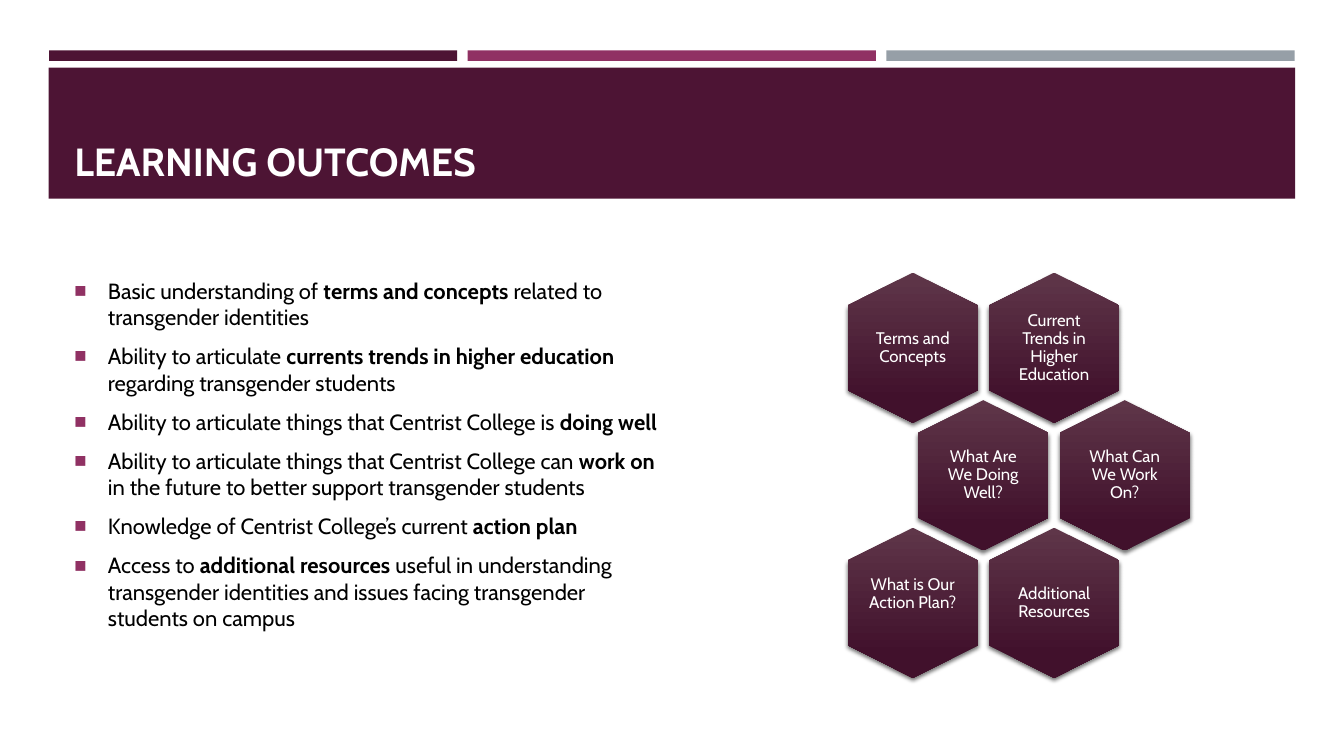
from lxml.etree import SubElement as Sub
from pptx import Presentation
from pptx.dml.color import RGBColor as RGB
from pptx.enum.shapes import MSO_SHAPE as Kind
from pptx.enum.text import MSO_ANCHOR as Anchor, PP_ALIGN as Align
from pptx.oxml.ns import qn
from pptx.util import Pt

TITLE = "LEARNING OUTCOMES"
GOALS = [
    [("Basic understanding of ", False), ("terms and concepts ", True),
     ("related to transgender identities", False)],
    [("Ability to articulate ", False), ("currents trends in higher education ", True),
     ("regarding transgender students", False)],
    [("Ability to articulate things that Centrist College is ", False), ("doing well", True)],
    [("Ability to articulate things that Centrist College can ", False), ("work on", True),
     (" in the future to better support transgender students", False)],
    [("Knowledge of Centrist College’s current ", False), ("action plan", True)],
    [("Access to ", False), ("additional resources ", True),
     ("useful in understanding transgender identities and issues facing "
      "transgender students on campus", False)],
]
CELLS = [
    [("Terms and Concepts", 0), ("Current Trends in Higher Education", 0)],
    [("What Are We Doing Well?", 0), ("What Can We Work On?", 0)],
    [("What is Our Action Plan?", -6.5), ("Additional Resources", 0)],
]
THEME = {
    "font": "Cabin", "plum": "4D1434", "rose": "903163", "gray": "969FA7",
    "light": "5F3649", "dark": "41112C", "white": "FFFFFF", "black": "000000",
    "title": 28, "body": 15.7, "cell": 12,
}


def tint(name):
    return RGB.from_string(THEME[name])


def style(para, size, color, bold=None):
    font = para.font
    font.name, font.size, font.bold = THEME["font"], Pt(THEME[size]), bold
    font.color.rgb = tint(color)


def shape(kind, left, top, width, height):
    item = slide.shapes.add_shape(kind, Pt(left), Pt(top), Pt(width), Pt(height))
    item.shadow.inherit = False
    item.line.fill.background()
    return item


def bar(left, top, width, height, color):
    item = shape(Kind.RECTANGLE, left, top, width, height)
    item.fill.solid()
    item.fill.fore_color.rgb = tint(color)


def text(left, top, width, height, anchor):
    box = slide.shapes.add_textbox(Pt(left), Pt(top), Pt(width), Pt(height))
    frame = box.text_frame
    frame.word_wrap, frame.vertical_anchor = True, anchor
    return frame


def bullet(para):
    props = para._p.get_or_add_pPr()
    props.set("marL", str(Pt(24)))
    props.set("indent", str(Pt(-24)))
    Sub(Sub(props, qn("a:buClr")), qn("a:srgbClr"), val=THEME["rose"])
    Sub(props, qn("a:buSzPct"), val="92000")
    Sub(props, qn("a:buFont"), typeface="Arial")
    Sub(props, qn("a:buChar"), char="■")


def hexagon(mid, row):
    item = shape(Kind.HEXAGON, mid - HEX_W / 2, row - HEX_H / 2, HEX_W, HEX_H)
    item.rotation = 90
    item.adjustments[0], item.adjustments[1] = 0.25, 1.15
    item.fill.gradient()
    item.fill.gradient_angle = 270
    for stop, name, place in zip(item.fill.gradient_stops, ("light", "dark"), (0, 0.84)):
        stop.color.rgb, stop.position = tint(name), place
    props = item._element.spPr
    props.find(qn("a:gradFill")).set("rotWithShape", "0")
    shade = Sub(props.find(qn("a:effectLst")), qn("a:outerShdw"), blurRad=str(Pt(3)),
                dist=str(Pt(2)), dir="5400000", rotWithShape="0")
    color = Sub(shade, qn("a:srgbClr"), val=THEME["black"])
    Sub(color, qn("a:alpha"), val="55000")


def label(words, mid, row):
    frame = text(mid - 32, row - 37, 64, 74, Anchor.MIDDLE)
    frame.margin_left = frame.margin_right = 0
    frame.margin_top = frame.margin_bottom = 0
    para = frame.paragraphs[0]
    para.text, para.alignment, para.line_spacing = words, Align.CENTER, 0.9
    style(para, "cell", "white")


deck = Presentation()
deck.slide_width, deck.slide_height = Pt(960), Pt(540)
slide = deck.slides.add_slide(deck.slide_layouts[6])

for spot, color in enumerate(("plum", "rose", "gray")):
    bar(35 + spot * 299.1, 36, 291.6, 7.5, color)
bar(34.8, 48.4, 890.4, 93.6, "plum")

head = text(46, 55.4, 868, 80, Anchor.BOTTOM).paragraphs[0]
head.text = TITLE
style(head, "title", "white", True)

body = text(46, 194.4, 433.4, 289.4, Anchor.MIDDLE)
body.margin_bottom = Pt(33)
for spot, goal in enumerate(GOALS):
    para = body.add_paragraph() if spot else body.paragraphs[0]
    bullet(para)
    para.space_before, para.space_after = Pt(3.1), Pt(6)
    style(para, "body", "black")
    for words, bold in goal:
        run = para.add_run()
        run.text = words
        run.font.bold = bold

HEX_W, HEX_H = 107.3, 93.6
LEFT, TOP = 652, 248.4
STEP, DROP, SHIFT = 101, 91.1, 50.4
for line, pair in enumerate(CELLS):
    for col, (words, nudge) in enumerate(pair):
        mid = LEFT + col * STEP + line % 2 * SHIFT
        row = TOP + line * DROP
        hexagon(mid, row)
        label(words, mid, row + nudge)

deck.save("out.pptx")
